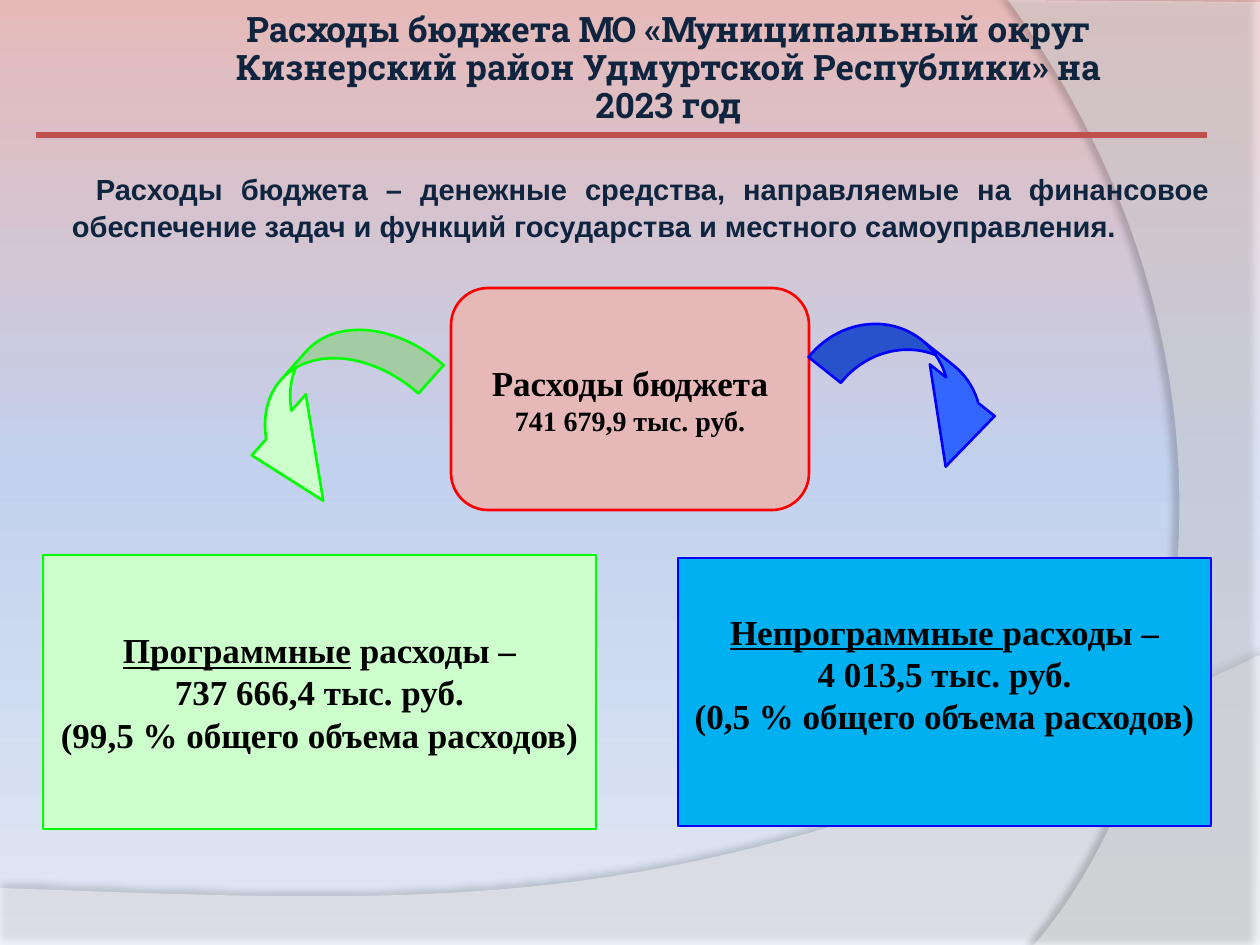
from copy import deepcopy
from dataclasses import dataclass

from lxml import etree
from pptx import Presentation
from pptx import util as u
from pptx.dml.color import RGBColor
from pptx.enum import shapes, text
from pptx.oxml import ns

PX = 914400 / 126
WIDTH, HEIGHT = 1260, 945


@dataclass(frozen=True)
class Theme:
    background: tuple = ((0, "E6B9B8"), (0.5, "C2D1ED"), (1, "E1E8F5"))
    wave: str = "FFFFFF"
    shadow: str = "000000"
    heading: str = "0F243E"
    ink: str = "000000"
    rule: str = "C0504D"
    total: tuple = ("E6B9B8", "FF0000")
    programme: tuple = ("CCFFCC", "00FF00")
    other: tuple = ("00B0F0", "0000FF")
    other_arrow: tuple = ("3366FF", "0000FF")
    title_font: str = "Roboto Slab"
    body_font: str = "Arial"
    box_font: str = "Times New Roman"
    large: float = 20
    medium: float = 16.6
    small: float = 16
    outline: float = 1.5
    rule_width: float = 3.75


THEME = Theme()


def px(length):
    return u.Emu(round(length * PX))


def rgb(value):
    return RGBColor.from_string(value)


def add_child(parent, tag, **attributes):
    names = {name: str(value) for name, value in attributes.items()}
    return etree.SubElement(parent, ns.qn(tag), names)


def style_paragraph(paragraph, font, size, color, alignment, indent=0):
    paragraph.alignment = alignment
    paragraph.font.name = font
    paragraph.font.size = u.Pt(size)
    paragraph.font.bold = True
    paragraph.font.color.rgb = rgb(color)
    if indent:
        properties = paragraph._p.get_or_add_pPr()
        properties.set("marL", "0")
        properties.set("indent", str(px(indent)))


def set_frame(frame, insets, anchor):
    frame.word_wrap = True
    frame.vertical_anchor = anchor
    (frame.margin_left, frame.margin_top,
     frame.margin_right, frame.margin_bottom) = map(px, insets)


def paint_background(slide):
    fill = slide.background.fill
    fill.gradient()
    fill.gradient_angle = 270
    stop_list = slide.element.find(".//" + ns.qn("a:gsLst"))
    stop_list.append(deepcopy(stop_list[-1]))
    for stop, (position, color) in zip(fill.gradient_stops, THEME.background):
        stop.position = position
        stop.color.rgb = rgb(color)


def curve(start, first, second, end, steps=60):
    """Points along a cubic Bezier curve."""
    points = []
    for step in range(steps + 1):
        t = step / steps
        weights = ((1 - t) ** 3, 3 * t * (1 - t) ** 2, 3 * t * t * (1 - t), t ** 3)
        points.append(tuple(sum(w * p[axis] for w, p in zip(weights, (start, first, second, end)))
                            for axis in (0, 1)))
    return points


def add_wave(slide, points, opacity, shadow_opacity, distance, direction):
    builder = slide.shapes.build_freeform(*(round(v * PX) for v in points[0]))
    builder.add_line_segments([(round(x * PX), round(y * PX)) for x, y in points[1:]])
    shape = builder.convert_to_shape()
    shape.fill.solid()
    shape.fill.fore_color.rgb = rgb(THEME.wave)
    color = shape._element.spPr.find(".//" + ns.qn("a:srgbClr"))
    add_child(color, "a:alpha", val=opacity * 1000)
    shape.line.fill.background()
    shape.shadow.inherit = False
    effects = shape._element.spPr.find(ns.qn("a:effectLst"))
    shadow = add_child(effects, "a:outerShdw", blurRad=u.Pt(4), dist=u.Pt(distance),
                       dir=direction * 60000, algn="ctr", rotWithShape=0)
    shadow_color = add_child(shadow, "a:srgbClr", val=THEME.shadow)
    add_child(shadow_color, "a:alpha", val=shadow_opacity * 1000)


def add_waves(slide):
    bottom = curve((WIDTH, 655), (704, 919), (493, 906), (0, 888))
    add_wave(slide, [(0, HEIGHT), (WIDTH, HEIGHT)] + bottom, 45, 35, 3.5, 270)
    side = curve((1034, HEIGHT), (1178, 780), (1283, 378), (1008, 0))
    add_wave(slide, [(WIDTH, 2), (WIDTH, HEIGHT)] + side, 40, 45, 4, 180)


def add_title(slide, left, top, width, height):
    frame = slide.shapes.add_textbox(*map(px, (left, top, width, height))).text_frame
    set_frame(frame, (6, 6, 6, 6), text.MSO_ANCHOR.MIDDLE)
    paragraph = frame.paragraphs[0]
    paragraph.text = ("Расходы бюджета МО «Муниципальный округ Кизнерский район "
                      "Удмуртской Республики» на 2023 год")
    paragraph.line_spacing = 0.9
    style_paragraph(paragraph, THEME.title_font, THEME.large, THEME.heading, text.PP_ALIGN.CENTER)


def add_rule(slide, left, top, width):
    rule = slide.shapes.add_connector(shapes.MSO_CONNECTOR.STRAIGHT,
                                      *map(px, (left, top, left + width, top)))
    rule.line.color.rgb = rgb(THEME.rule)
    rule.line.width = u.Pt(THEME.rule_width)
    add_child(rule._element.spPr, "a:effectLst")


def add_definition(slide, left, top, width, height):
    frame = slide.shapes.add_textbox(*map(px, (left, top, width, height))).text_frame
    set_frame(frame, (13, 6, 13, 6), text.MSO_ANCHOR.TOP)
    paragraph = frame.paragraphs[0]
    paragraph.text = ("Расходы бюджета – денежные средства, направляемые на финансовое "
                      "обеспечение задач и функций государства и местного самоуправления.")
    paragraph.line_spacing = 1.05
    style_paragraph(paragraph, THEME.body_font, THEME.medium, THEME.heading,
                    text.PP_ALIGN.JUSTIFY, indent=24)


def add_outlined(slide, kind, box, colors, adjustments=(), rotation=0):
    shape = slide.shapes.add_shape(kind, *map(px, box))
    fill, line = colors
    shape.fill.solid()
    shape.fill.fore_color.rgb = rgb(fill)
    shape.line.color.rgb = rgb(line)
    shape.line.width = u.Pt(THEME.outline)
    shape.shadow.inherit = False
    shape.rotation = rotation
    for index, value in enumerate(adjustments):
        shape.adjustments[index] = value
    return shape


def add_amount_box(slide, kind, box, colors, lines, insets):
    """Box of centred lines, each given as (underlined, plain, size, indent)."""
    frame = add_outlined(slide, kind, box, colors).text_frame
    set_frame(frame, insets, text.MSO_ANCHOR.MIDDLE)
    for index, (underlined, plain, size, indent) in enumerate(lines):
        paragraph = frame.add_paragraph() if index else frame.paragraphs[0]
        style_paragraph(paragraph, THEME.box_font, size, THEME.ink, text.PP_ALIGN.CENTER, indent)
        if underlined:
            run = paragraph.add_run()
            run.text = underlined
            run.font.underline = True
        paragraph.add_run().text = plain


def add_breakdown(slide):
    kinds = shapes.MSO_SHAPE
    large, small = THEME.large, THEME.small
    add_amount_box(slide, kinds.ROUNDED_RECTANGLE, (451, 288, 358, 222), THEME.total,
                   [("", "Расходы бюджета", large, -18),
                    ("", "741 679,9 тыс. руб.", small, 0)], (18, 6, 18, 6))
    add_amount_box(slide, kinds.RECTANGLE, (43, 555, 553, 274), THEME.programme,
                   [("Программные", " расходы –", large, -9),
                    ("", "737 666,4 тыс. руб.", large, -9),
                    ("", "(99,5 % общего объема расходов)", large, 0)], (15, 0, 15, 0))
    add_amount_box(slide, kinds.RECTANGLE, (678, 558, 533, 268), THEME.other,
                   [("Непрограммные ", "расходы –", large, -9),
                    ("", "4 013,5 тыс. руб.", large, -18),
                    ("", "(0,5 % общего объема расходов)", large, 0)], (15, 0, 15, 38))
    add_outlined(slide, kinds.CURVED_UP_ARROW, (217, 355, 222, 112), THEME.programme,
                 (0.338, 0.727, 0.747), 131.6)
    add_outlined(slide, kinds.CURVED_DOWN_ARROW, (811, 350, 217, 84), THEME.other_arrow,
                 (0.492, 0.987, 0.834), 38.6)


def main():
    presentation = Presentation()
    presentation.slide_width, presentation.slide_height = px(WIDTH), px(HEIGHT)
    slide = presentation.slides.add_slide(presentation.slide_layouts[6])
    paint_background(slide)
    add_waves(slide)
    add_title(slide, 213, 37, 911, 64)
    add_definition(slide, 59, 164, 1162, 78)
    add_rule(slide, 36, 135, 1171)
    add_breakdown(slide)
    presentation.save("out.pptx")


if __name__ == "__main__":
    main()
